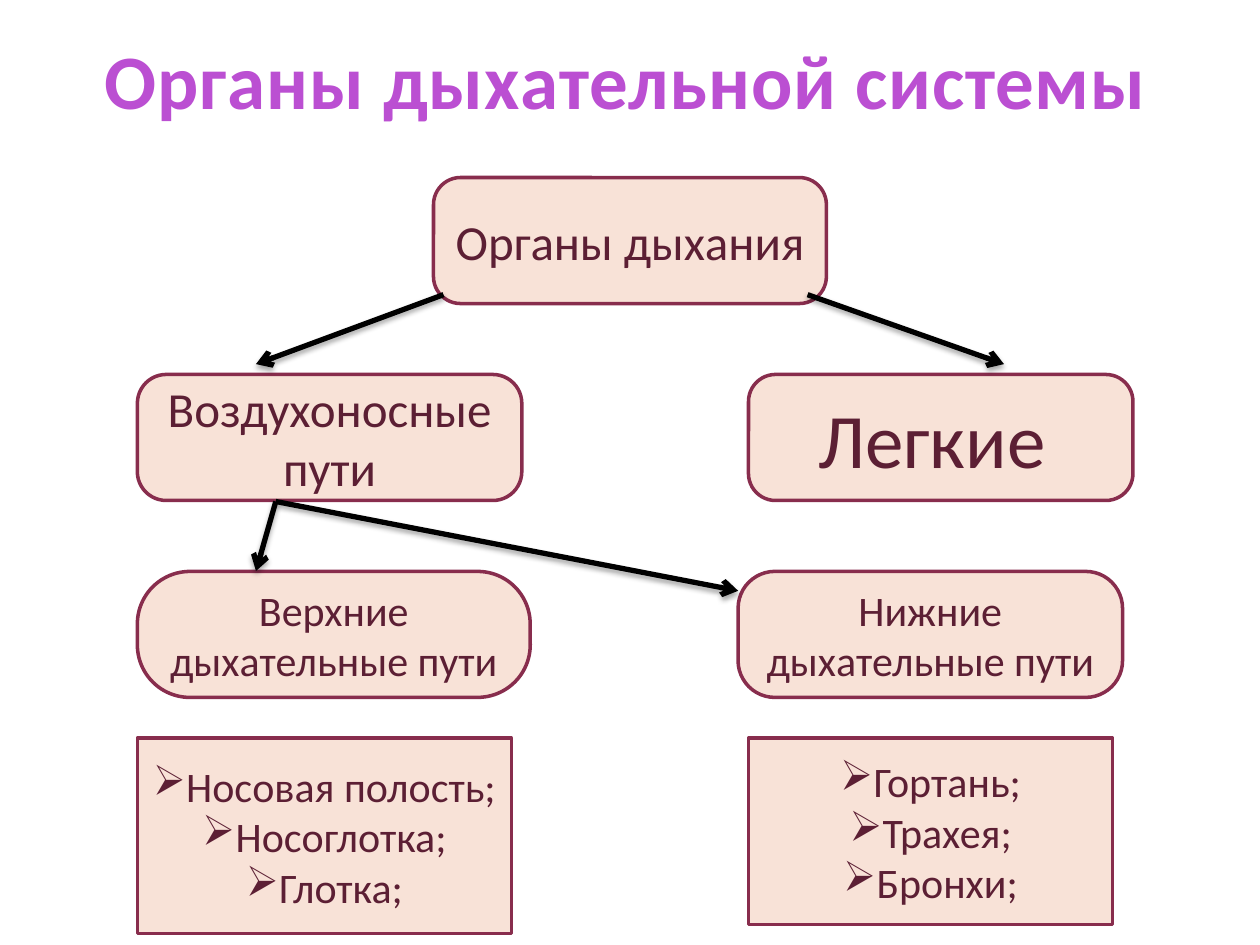
from lxml import etree
from pptx import Presentation
from pptx.dml.color import RGBColor
from pptx.enum.shapes import MSO_CONNECTOR, MSO_SHAPE
from pptx.enum.text import MSO_ANCHOR, PP_ALIGN
from pptx.oxml import parse_xml
from pptx.oxml.ns import nsdecls, qn
from pptx.util import Cm, Pt

ROUNDED = MSO_SHAPE.ROUNDED_RECTANGLE
RECTANGLE = MSO_SHAPE.RECTANGLE
STRAIGHT = MSO_CONNECTOR.STRAIGHT
MIDDLE = MSO_ANCHOR.MIDDLE
CENTER = PP_ALIGN.CENTER

FONT = "Calibri"
PURPLE, PEACH, WINE, DARK_WINE, BLACK = "BB4FD2", "F8E2D7", "882D4D", "5C1F34", "000000"
BULLET = "➢"

TITLE = "Органы дыхательной системы"
LEFT, LOWER_RIGHT, RIGHT = 2.77, 14.88, 15.09
TOP, ROW_STEP, BOX_HEIGHT = 3.58, 3.97, 2.54
LIST_TOP = 14.88

BOXES = [
    ("Органы дыхания", 0, 8.74, 7.92, 0.214, 28),
    ("Воздухоносные пути", 1, LEFT, 7.75, 0.229, 28),
    ("Легкие ", 1, RIGHT, 7.75, 0.214, 44),
    ("Верхние дыхательные пути", 2, LEFT, 7.92, 0.417, 24),
    ("Нижние дыхательные пути", 2, LOWER_RIGHT, 7.75, 0.292, 24),
]
ARROWS = [
    ((16.28, 5.94), (20.24, 7.34)),
    ((8.94, 5.94), (5.16, 7.34)),
    ((5.56, 10.11), (5.16, 11.51)),
    ((5.56, 10.11), (LOWER_RIGHT, 11.91)),
]
LISTS = [
    (["Носовая полость;", "Носоглотка;", "Глотка;"], LEFT, 7.54, 3.94),
    (["Гортань;", "Трахея;", "Бронхи;"], RIGHT, 7.34, 3.76),
]


def color(value):
    return RGBColor.from_string(value)


def write(shape, lines, size, text_color, bold=False, bullet=None):
    frame = shape.text_frame
    frame.word_wrap = True
    frame.vertical_anchor = MIDDLE
    for index, line in enumerate(lines):
        paragraph = frame.add_paragraph() if index else frame.paragraphs[0]
        paragraph.alignment = CENTER
        if bullet:
            properties = paragraph._p.get_or_add_pPr()
            etree.SubElement(properties, qn("a:buChar")).set("char", bullet)
        run = paragraph.add_run()
        run.text = line
        for name, value in {"name": FONT, "size": Pt(size), "bold": bold}.items():
            setattr(run.font, name, value)
        run.font.color.rgb = color(text_color)


def add_box(slide, kind, left, top, width, height):
    shape = slide.shapes.add_shape(kind, Cm(left), Cm(top), Cm(width), Cm(height))
    shape.shadow.inherit = False
    shape.fill.solid()
    shape.fill.fore_color.rgb = color(PEACH)
    shape.line.color.rgb = color(WINE)
    shape.line.width = Pt(2)
    return shape


def add_arrow(slide, start, end):
    points = [Cm(value) for value in start + end]
    connector = slide.shapes.add_connector(STRAIGHT, *points)
    connector.line.color.rgb = color(BLACK)
    connector.line.width = Pt(3)
    line = connector.line._get_or_add_ln()
    etree.SubElement(line, qn("a:tailEnd")).set("type", "arrow")
    connector._element.spPr.append(parse_xml(
        f'<a:effectLst {nsdecls("a")}>'
        f'<a:outerShdw blurRad="{Pt(3.1)}" dist="{Pt(1.8)}" dir="5400000" rotWithShape="0">'
        f'<a:srgbClr val="{BLACK}"><a:alpha val="35000"/></a:srgbClr>'
        '</a:outerShdw></a:effectLst>'))


def main():
    presentation = Presentation()
    presentation.slide_width, presentation.slide_height = Cm(25.4), Cm(19.05)
    slide = presentation.slides.add_slide(presentation.slide_layouts[6])

    title = slide.shapes.add_textbox(Cm(1.19), Cm(0), Cm(22.86), Cm(3.18))
    write(title, [TITLE], 44, PURPLE, bold=True)
    title.text_frame.paragraphs[0].runs[0]._r.get_or_add_rPr().set("spc", "50")

    for text, row, left, width, rounding, size in BOXES:
        box = add_box(slide, ROUNDED, left, TOP + row * ROW_STEP, width, BOX_HEIGHT)
        box.adjustments[0] = rounding
        write(box, [text], size, DARK_WINE)

    for start, end in ARROWS:
        add_arrow(slide, start, end)

    for items, left, width, height in LISTS:
        box = add_box(slide, RECTANGLE, left, LIST_TOP, width, height)
        write(box, items, 24, DARK_WINE, bullet=BULLET)

    presentation.save("out.pptx")


if __name__ == "__main__":
    main()
